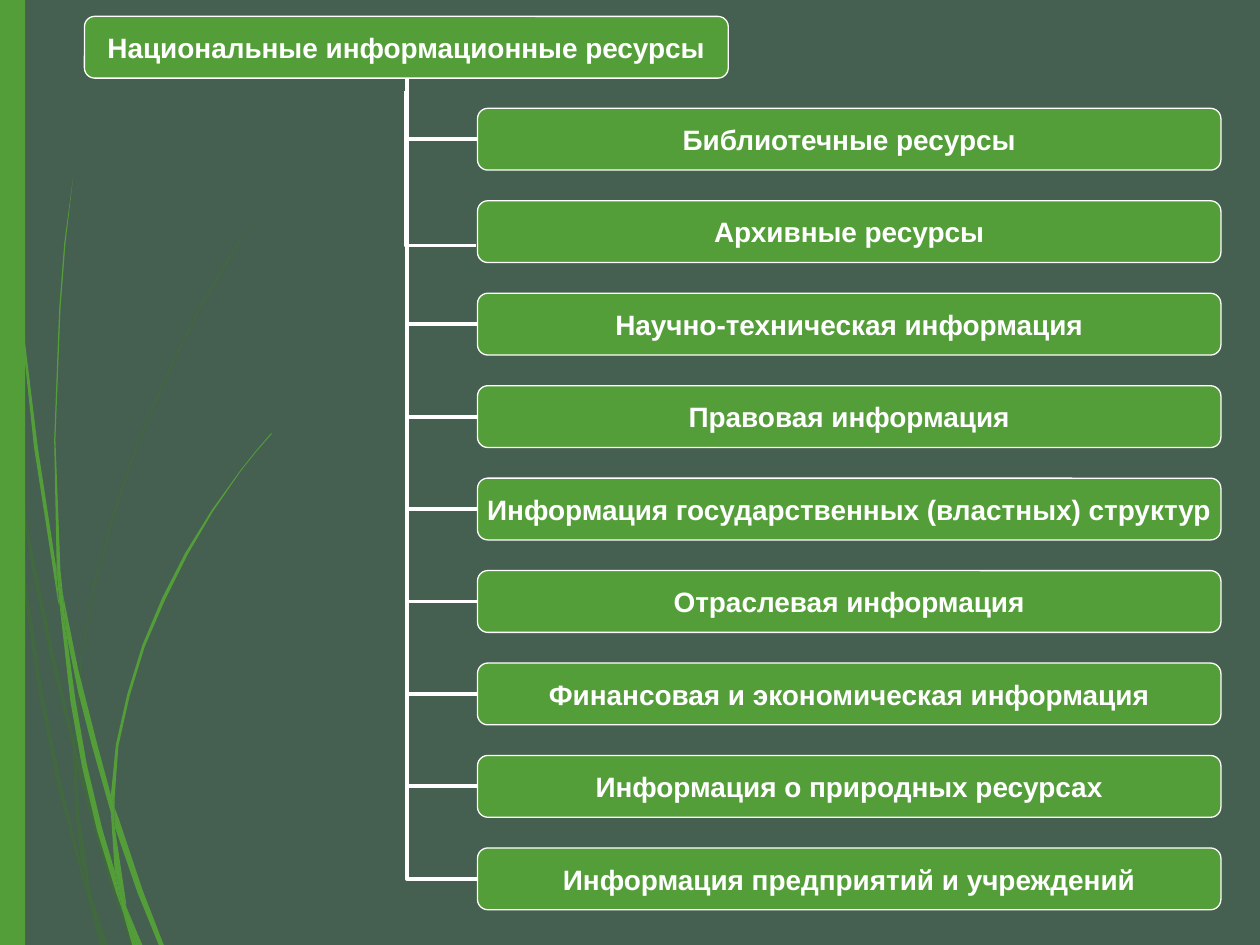
from pptx import Presentation
from pptx.dml.color import RGBColor
from pptx.enum.shapes import MSO_CONNECTOR as Link, MSO_SHAPE as Shape
from pptx.enum.text import MSO_ANCHOR as Anchor, PP_ALIGN as Align
from pptx.oxml.ns import qn
from pptx.oxml.xmlchemy import OxmlElement
from pptx.util import Inches, Pt

ROOT = "Национальные информационные ресурсы"
BRANCHES = [
    "Библиотечные ресурсы",
    "Архивные ресурсы",
    "Научно-техническая информация",
    "Правовая информация",
    "Информация государственных (властных) структур",
    "Отраслевая информация",
    "Финансовая и экономическая информация",
    "Информация о природных ресурсах",
    "Информация предприятий и учреждений",
]

THEME = {
    "background": RGBColor.from_string("455F51"),
    "green": RGBColor.from_string("549E39"),
    "dark_green": RGBColor.from_string("3F762B"),
    "white": RGBColor.from_string("FFFFFF"),
    "faint_alpha": 40000,
    "outline": Pt(0.75),
    "link": Pt(2.25),
    "font": {"name": "Arial", "size": Pt(16), "bold": True},
}

# Outlines of the grass blades, in inches
FAINT_BLADES = [
    [(0.08, 3.5), (0.06, 3.22), (0, 2.82), (0, 2.99), (0.07, 3.44)],
    [(0.4, 5.22), (0.59, 5.99), (0.59, 5.86), (0.43, 5.2), (0.25, 4.33), (0.1, 3.45),
     (0.12, 3.76), (0.25, 4.5)],
    [(0.64, 6.07), (0.61, 5.96), (0.61, 6.1), (0.85, 6.94), (1.04, 7.5), (1.08, 7.5),
     (0.88, 6.92)],
    [(0.83, 7.5), (0.86, 7.5), (0.73, 7.11)],
    [(0.64, 6.83), (0.48, 6.19), (0.33, 5.45), (0.22, 4.69), (0.12, 3.76), (0.08, 3.5),
     (0.19, 4.7), (0.3, 5.46), (0.45, 6.21), (0.64, 6.93), (0.7, 7.14), (0.69, 7.07)],
    [(0.58, 5.99), (0.6, 6.46), (0.64, 6.83), (0.67, 6.92), (0.73, 7.11), (0.72, 7.06),
     (0.63, 6.46), (0.61, 6.1), (0.61, 6.08)],
    [(0.61, 5.84), (0.65, 5.22), (0.76, 4.62), (0.92, 4.05), (1.11, 3.49), (1.34, 2.96),
     (1.59, 2.45), (1.87, 1.98), (2.01, 1.75), (2.17, 1.54), (2.17, 1.53), (2.01, 1.75),
     (1.86, 1.97), (1.58, 2.44), (1.33, 2.95), (1.1, 3.48), (0.91, 4.04), (0.75, 4.61),
     (0.64, 5.22), (0.59, 5.84), (0.59, 5.86), (0.61, 5.96)],
    [(0.7, 7.14), (0.79, 7.5), (0.82, 7.5)],
    [(0.61, 6.08), (0.61, 6.1), (0.61, 5.96), (0.59, 5.86), (0.58, 5.99)],
    [(0.67, 6.92), (0.65, 6.83), (0.69, 7.07), (0.7, 7.14), (0.82, 7.5), (0.83, 7.5),
     (0.73, 7.11)],
]
BRIGHT_BLADES = [
    [(0.05, 1.1), (0.14, 2.33), (0.27, 3.55), (0.46, 4.77), (0.47, 4.81), (0.45, 4.57),
     (0.45, 4.53), (0.3, 3.55), (0.15, 2.32), (0.06, 1.09), (0.04, 0.48), (0.03, 0),
     (0.02, 0), (0.03, 0.48)],
    [(0.73, 5.92), (0.88, 6.45), (0.88, 6.33), (0.88, 6.31), (0.77, 5.9), (0.62, 5.31),
     (0.5, 4.72), (0.53, 5.05), (0.62, 5.49)],
    [(0.94, 6.49), (0.91, 6.41), (0.91, 6.56), (1.09, 7.08), (1.26, 7.5), (1.3, 7.5),
     (1.13, 7.06)],
    [(0.91, 6.91), (0.81, 6.57), (0.69, 6.07), (0.6, 5.56), (0.53, 5.05), (0.47, 4.77),
     (0.56, 5.57), (0.65, 6.08), (0.77, 6.59), (0.92, 7.08), (0.97, 7.22), (0.96, 7.17)],
    [(0.5, 4.72), (0.48, 4.53), (0.44, 3.49), (0.48, 2.45), (0.52, 1.93), (0.58, 1.41),
     (0.51, 1.93), (0.47, 2.45), (0.43, 3.49), (0.45, 4.49), (0.49, 4.72)],
    [(1.1, 7.5), (1.13, 7.5), (1, 7.19)],
    [(0.47, 4.77), (0.53, 5.05), (0.5, 4.72), (0.49, 4.72), (0.45, 4.49), (0.45, 4.53)],
    [(0.91, 6.33), (0.94, 5.92), (1.03, 5.52), (1.15, 5.13), (1.31, 4.76), (1.49, 4.4),
     (1.69, 4.06), (1.91, 3.74), (2.03, 3.59), (2.16, 3.44), (2.15, 3.44), (2.03, 3.58),
     (1.91, 3.73), (1.68, 4.05), (1.47, 4.39), (1.29, 4.74), (1.13, 5.12), (1.01, 5.51),
     (0.92, 5.91), (0.88, 6.31), (0.91, 6.41)],
    [(0.97, 7.22), (1.05, 7.5), (1.08, 7.5)],
    [(0.88, 6.45), (0.91, 6.91), (0.96, 7.06), (1, 7.19), (1, 7.16), (0.91, 6.56),
     (0.9, 6.51)],
    [(0.88, 6.45), (0.9, 6.51), (0.91, 6.56), (0.91, 6.41), (0.88, 6.31), (0.88, 6.33)],
    [(0.96, 7.06), (0.91, 6.91), (0.96, 7.17), (0.97, 7.22), (1.08, 7.5), (1.1, 7.5),
     (1, 7.19)],
]

BOX_HEIGHT = 0.49
ROOT_AT = (0.67, 0.13, 5.11, BOX_HEIGHT)
BRANCH_LEFT, BRANCH_WIDTH = 3.79, 5.9
FIRST_TOP, LAST_TOP = 0.86, 6.73
TRUNK_X = 3.23
TRUNK_TOP = ROOT_AT[1] + BOX_HEIGHT
SHIFTED_LINKS = {1: (-0.01, 0.1, 0.11)}  # branch: shift of x, top end, branch end


def paint(shape, color):
    shape.shadow.inherit = False
    shape.fill.solid()
    shape.fill.fore_color.rgb = color
    shape.line.fill.background()


def add_blade(page, points, color, alpha=None):
    corners = [(Inches(x), Inches(y)) for x, y in points]
    builder = page.shapes.build_freeform(*corners[0])
    builder.add_line_segments(corners[1:], close=True)
    blade = builder.convert_to_shape()
    paint(blade, color)
    if alpha:
        opacity = OxmlElement("a:alpha")
        opacity.set("val", str(alpha))
        next(blade._element.spPr.iter(qn("a:srgbClr"))).append(opacity)


def add_link(page, trunk_x, trunk_top, branch_x, branch_y):
    """Run a one-bend line from a branch to the trunk and up to the root."""
    ends = [Inches(v) for v in (branch_x, branch_y, trunk_x, trunk_top)]
    link = page.shapes.add_connector(Link.ELBOW, *ends)
    link.line.color.rgb = THEME["white"]
    link.line.width = THEME["link"]
    properties = link._element.spPr
    properties.find(qn("a:prstGeom")).set("prst", "bentConnector2")
    properties.append(OxmlElement("a:effectLst"))


def add_box(page, text, place):
    box = page.shapes.add_shape(Shape.ROUNDED_RECTANGLE, *map(Inches, place))
    paint(box, THEME["green"])
    box.line.color.rgb = THEME["white"]
    box.line.width = THEME["outline"]
    frame = box.text_frame
    layout = {"margin_left": 0, "margin_right": 0, "margin_top": 0, "margin_bottom": 0,
              "word_wrap": False, "vertical_anchor": Anchor.MIDDLE}
    for name, value in layout.items():
        setattr(frame, name, value)
    para = frame.paragraphs[0]
    para.alignment = Align.CENTER
    span = para.add_run()
    span.text = text
    for name, value in THEME["font"].items():
        setattr(span.font, name, value)
    span.font.color.rgb = THEME["white"]


def main():
    deck = Presentation()
    deck.slide_width, deck.slide_height = Inches(10), Inches(7.5)
    page = deck.slides.add_slide(deck.slide_layouts[6])
    page.background.fill.solid()
    page.background.fill.fore_color.rgb = THEME["background"]

    for points in FAINT_BLADES:
        add_blade(page, points, THEME["dark_green"], THEME["faint_alpha"])
    for points in BRIGHT_BLADES:
        add_blade(page, points, THEME["green"])
    side_bar = page.shapes.add_shape(Shape.RECTANGLE, 0, 0, Inches(0.2), deck.slide_height)
    paint(side_bar, THEME["green"])

    pitch = (LAST_TOP - FIRST_TOP) / (len(BRANCHES) - 1)
    tops = [FIRST_TOP + pitch * row for row in range(len(BRANCHES))]
    for row, top in reversed(list(enumerate(tops))):
        dx, rise, drop = SHIFTED_LINKS.get(row, (0, 0, 0))
        add_link(page, TRUNK_X + dx, TRUNK_TOP + rise,
                 BRANCH_LEFT + dx, top + BOX_HEIGHT / 2 + drop)
    add_box(page, ROOT, ROOT_AT)
    for text, top in zip(BRANCHES, tops):
        add_box(page, text, (BRANCH_LEFT, top, BRANCH_WIDTH, BOX_HEIGHT))

    deck.save("out.pptx")


if __name__ == "__main__":
    main()
